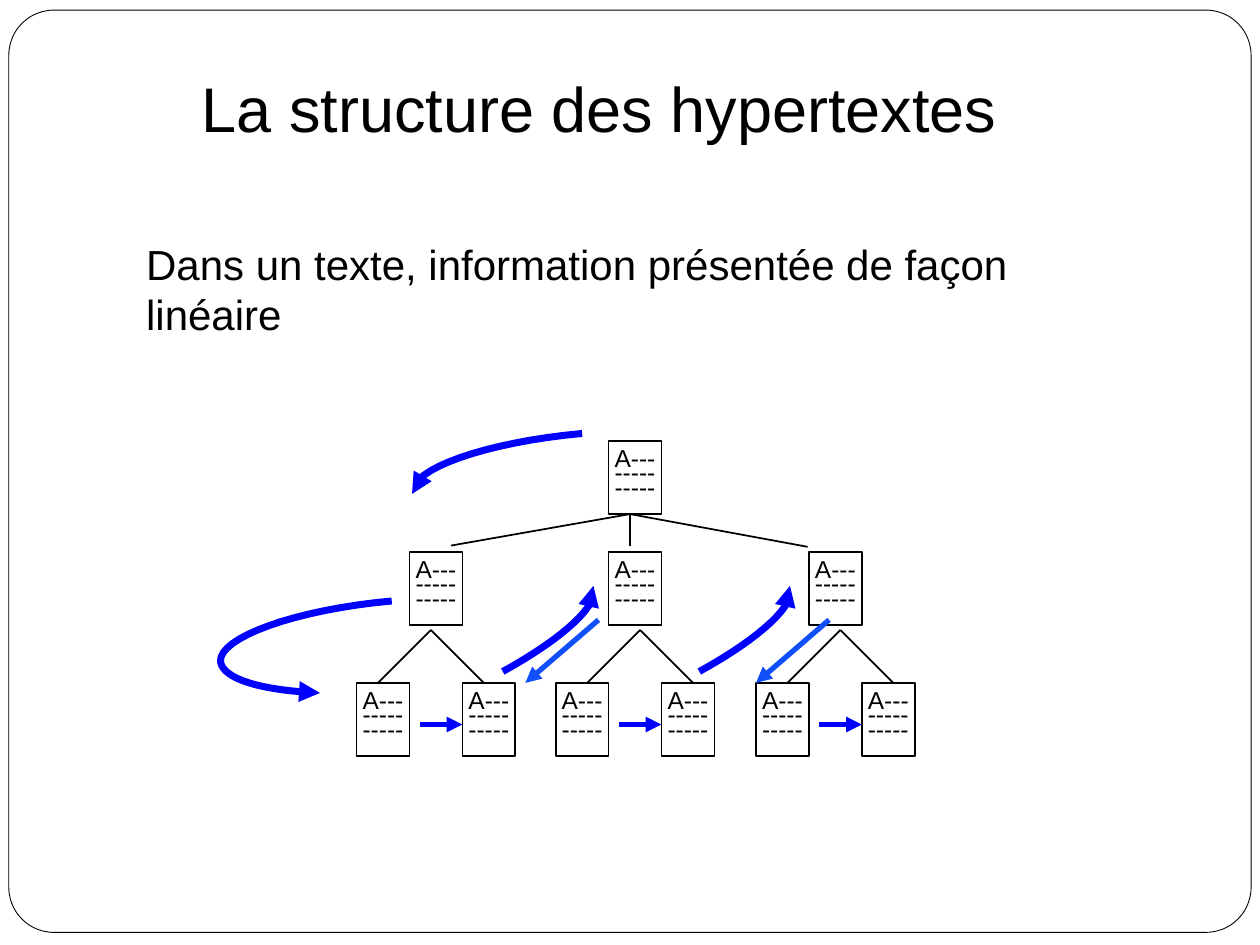
from lxml.etree import SubElement
from pptx import Presentation
from pptx.dml.color import RGBColor
from pptx.enum.shapes import MSO_CONNECTOR, MSO_SHAPE
from pptx.enum.text import MSO_ANCHOR, MSO_AUTO_SIZE, PP_ALIGN
from pptx.oxml.ns import qn
from pptx.util import Inches, Pt

COLORS = {"black": "000000", "white": "FFFFFF", "blue": "0000FF", "light_blue": "114FFB"}


def style_line(shape, color, width, arrow=False):
    shape.line.color.rgb = RGBColor.from_string(COLORS[color])
    shape.line.width = Pt(width)
    properties = shape._element.spPr
    if arrow:
        SubElement(properties.find(qn("a:ln")), qn("a:tailEnd"), type="triangle")
    if properties.find(qn("a:effectLst")) is None:
        SubElement(properties, qn("a:effectLst"))


def add_line(start, end, color="black", width=1, arrow=False):
    points = [Inches(value) for value in (*start, *end)]
    connector = slide.shapes.add_connector(MSO_CONNECTOR.STRAIGHT, *points)
    style_line(connector, color, width, arrow)


presentation = Presentation()
presentation.slide_width = Inches(10)
presentation.slide_height = Inches(7.5)
slide = presentation.slides.add_slide(presentation.slide_layouts[1])

frame = slide.shapes.add_shape(
    MSO_SHAPE.ROUNDED_RECTANGLE, Inches(0.07), Inches(0.08), Inches(9.86), Inches(7.32)
)
frame.adjustments[0] = 0.049
frame.fill.solid()
frame.fill.fore_color.rgb = RGBColor.from_string(COLORS["white"])
style_line(frame, "black", 0.5)
slide.shapes._spTree.insert(2, frame._element)

headings = [
    (slide.shapes.title, "La structure des hypertextes", (1.5, 0.5, 6.51, 0.7), 36),
    (slide.placeholders[1], "Dans un texte, information présentée de façon linéaire",
     (1.06, 1.84, 8.2, 0.5), 24),
]
for shape, text, box, size in headings:
    shape.left, shape.top, shape.width, shape.height = [Inches(value) for value in box]
    text_frame = shape.text_frame
    text_frame.text = text
    text_frame.auto_size = MSO_AUTO_SIZE.NONE
    text_frame.word_wrap = False
    text_frame.vertical_anchor = MSO_ANCHOR.TOP
    paragraph = text_frame.paragraphs[0]
    paragraph.alignment = PP_ALIGN.LEFT
    paragraph.space_before = Pt(0)
    paragraph.font.name = "Arial"
    paragraph.font.size = Pt(size)
    paragraph.font.color.rgb = RGBColor.from_string(COLORS["black"])
    properties = paragraph._p.get_or_add_pPr()
    properties.set("marL", "0")
    properties.set("indent", "0")
    SubElement(properties, qn("a:buNone")) if properties.find(qn("a:defRPr")) is None else \
        properties.find(qn("a:defRPr")).addprevious(SubElement(properties, qn("a:buNone")))

branches = [3.25, 4.83, 6.42]
leaf_offset = 0.42
pages = [(4.83, 3.5)] + [(left, 4.38) for left in branches]
pages += [(left + side * leaf_offset, 5.42) for left in branches for side in (-1, 1)]
for left, top in pages:
    page = slide.shapes.add_shape(
        MSO_SHAPE.RECTANGLE, Inches(left), Inches(top), Inches(0.42), Inches(0.58)
    )
    page.fill.solid()
    page.fill.fore_color.rgb = RGBColor.from_string(COLORS["white"])
    style_line(page, "black", 1)
    text_frame = page.text_frame
    text_frame.text = "A---\n-----\n-----"
    text_frame.word_wrap = False
    text_frame.vertical_anchor = MSO_ANCHOR.MIDDLE
    for paragraph in text_frame.paragraphs:
        paragraph.alignment = PP_ALIGN.CENTER
        paragraph.line_spacing = 0.5
        paragraph.font.name = "Arial"
        paragraph.font.size = Pt(14)
        paragraph.font.color.rgb = RGBColor.from_string(COLORS["black"])

for end in [(3.58, 4.33), (5, 4.33), (6.41, 4.34)]:
    add_line((5, 4.08), end)
for apex in (3.42, 5.08, 6.67):
    for side in (-1, 1):
        add_line((apex, 5), (apex + side * leaf_offset, 5.42))

for left in branches:
    add_line((left + 0.08, 5.75), (left + leaf_offset, 5.75), "blue", 3, True)

curves = [
    [(4.62, 3.44), (3.86, 3.51), (3.25, 3.72), (3.27, 3.92)],
    [(3.11, 4.77), (2.34, 4.84), (1.74, 5.06), (1.75, 5.25),
     (1.77, 5.39), (2.07, 5.48), (2.54, 5.5)],
]
curves += [[(left, 5.33), (left + 0.49, 5.06), (left + 0.78, 4.79), (left + 0.72, 4.65)]
           for left in (3.99, 5.55)]
steps = 16
for controls in curves:
    points = [controls[0]]
    for first in range(0, len(controls) - 1, 3):
        segment = controls[first:first + 4]
        for step in range(1, steps + 1):
            t = step / steps
            weights = [(1 - t) ** 3, 3 * t * (1 - t) ** 2, 3 * t ** 2 * (1 - t), t ** 3]
            points.append([sum(w * point[axis] for w, point in zip(weights, segment))
                           for axis in (0, 1)])
    points = [(Inches(x), Inches(y)) for x, y in points]
    builder = slide.shapes.build_freeform(*points[0])
    builder.add_line_segments(points[1:], close=False)
    curve = builder.convert_to_shape()
    curve.fill.background()
    style_line(curve, "blue", 4, True)

for start in (4.75, 6.58):
    add_line((start, 4.92), (start - 0.58, 5.42), "light_blue", 3, True)

presentation.save("out.pptx")
